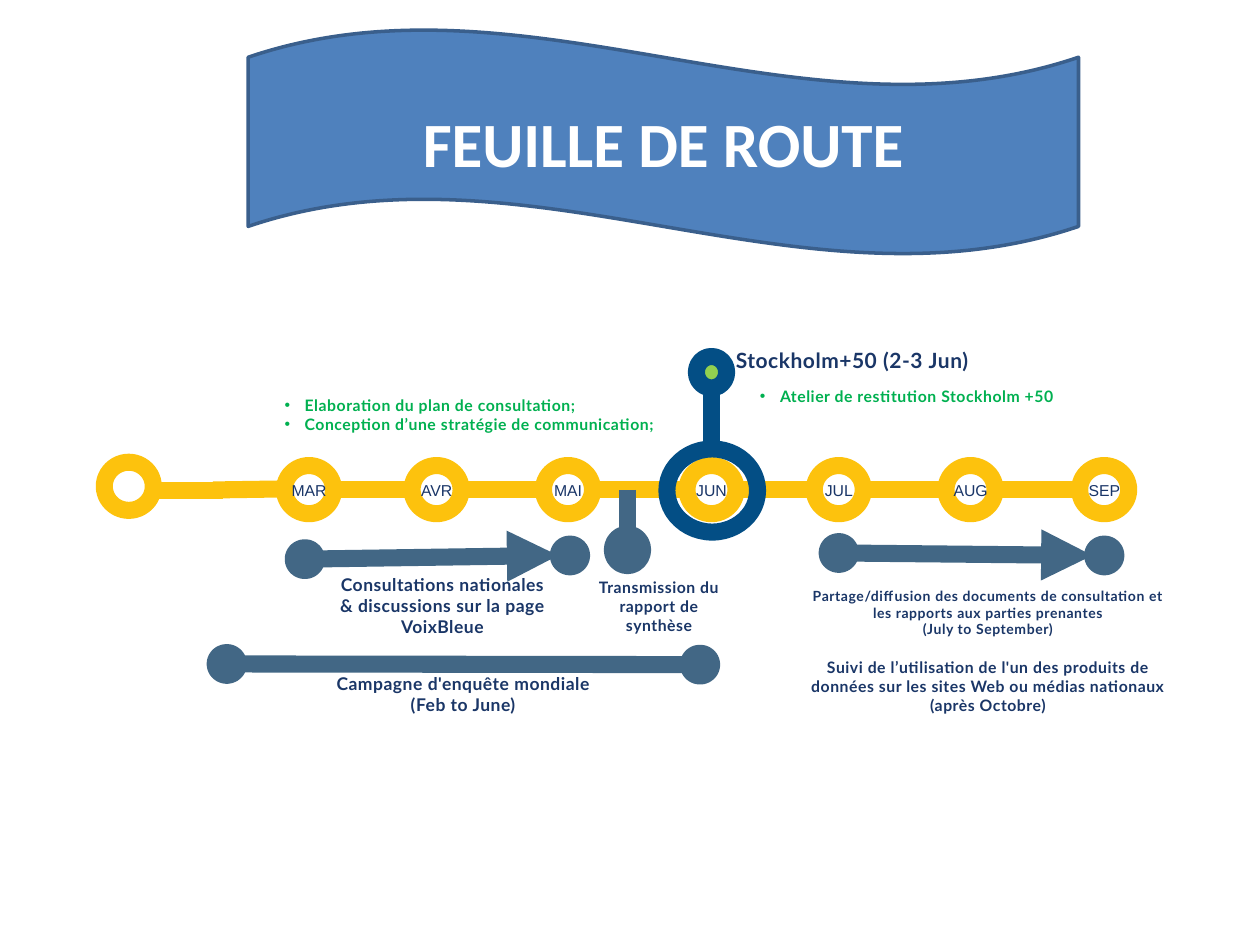
import pptx
import pptx.dml.color
import pptx.enum.shapes
import pptx.enum.text
import pptx.oxml.ns
import pptx.util
from lxml import etree

Pt = pptx.util.Pt
qn = pptx.oxml.ns.qn
SHAPES = pptx.enum.shapes.MSO_SHAPE
ALIGN = pptx.enum.text.PP_ALIGN

YELLOW, SLATE, BLUE = "FDC20D", "426785", "034E85"
NAVY, MONTH_NAVY, GREEN = "1A3667", "193567", "00B050"


def color(hex_code):
    return pptx.dml.color.RGBColor.from_string(hex_code)


class Roadmap:
    """Holds the drawing style and the current slide; lengths are in points."""

    stroke = 9.75
    heading_font = "Lato"
    month_font = "Arial"
    title_font = "Calibri"

    def __init__(self, slide):
        self.shapes = slide.shapes

    def shape(self, kind, left, top, width, height, line, fill=None, weight=stroke):
        shape = self.shapes.add_shape(kind, Pt(left), Pt(top), Pt(width), Pt(height))
        shape.shadow.inherit = False
        if fill:
            shape.fill.solid()
            shape.fill.fore_color.rgb = color(fill)
        else:
            shape.fill.background()
        shape.line.color.rgb = color(line)
        shape.line.width = Pt(weight)
        return shape

    def circle(self, x, y, width, height, line, fill=None):
        """Draws an ellipse around its centre."""
        self.shape(SHAPES.OVAL, x - width / 2, y - height / 2, width, height, line, fill)

    def line(self, x1, y1, x2, y2, line, arrow=False):
        connector = self.shapes.add_connector(
            pptx.enum.shapes.MSO_CONNECTOR.STRAIGHT, Pt(x1), Pt(y1), Pt(x2), Pt(y2))
        connector.line.color.rgb = color(line)
        connector.line.width = Pt(self.stroke)
        if arrow:
            etree.SubElement(connector.line._get_or_add_ln(), qn("a:tailEnd"), type="triangle")
        etree.SubElement(connector._element.spPr, qn("a:effectLst"))

    def style(self, paragraph, size, ink, font, bold):
        paragraph.font.size = Pt(size)
        paragraph.font.name = font
        paragraph.font.bold = bold
        paragraph.font.color.rgb = color(ink)

    def text(self, left, top, width, height, lines, ink=NAVY, font=heading_font,
             bold=True, align=ALIGN.CENTER, bullet=False):
        """Adds a text box; each line is (text, size, space before)."""
        frame = self.shapes.add_textbox(Pt(left), Pt(top), Pt(width), Pt(height)).text_frame
        frame.word_wrap = True
        frame.margin_left = frame.margin_right = Pt(3.6)
        frame.margin_top = frame.margin_bottom = Pt(2)
        for number, (words, size, gap) in enumerate(lines):
            paragraph = frame.add_paragraph() if number else frame.paragraphs[0]
            paragraph.alignment = align
            if gap:
                paragraph.space_before = Pt(gap)
            if bullet:
                properties = paragraph._p.get_or_add_pPr()
                properties.set("marL", str(Pt(11.5)))
                properties.set("indent", str(-Pt(11.5)))
                etree.SubElement(properties, qn("a:buFont"), typeface="Arial")
                etree.SubElement(properties, qn("a:buChar"), char="•")
            run = paragraph.add_run()
            run.text = words
            if font == self.heading_font:
                run._r.get_or_add_rPr().set("spc", "30")
            self.style(paragraph, size, ink, font, bold)

    def bullets(self, left, top, lines):
        self.text(left, top, 248.4, 26.6, [(words, 9, 0) for words in lines],
                  GREEN, align=ALIGN.LEFT, bullet=True)

    def month(self, x, y, name):
        self.text(x - 27, y - 7.2, 54, 14.4, [(name, 9, 0)], MONTH_NAVY,
                  self.month_font, bold=False)

    def period(self, start, end, arrow=False):
        """Draws a bar between two dots, given their centres."""
        tip = end[0] - 6.8 if arrow else end[0]
        self.line(*start, tip, end[1], SLATE, arrow)
        for x, y in (start, end):
            self.circle(x, y, 13.3, 13, SLATE, SLATE)

    def banner(self, left, top, width, height, words):
        wave = self.shape(SHAPES.WAVE, left, top, width, height, "3A5F8C", "4F81BD", 2)
        frame = wave.text_frame
        frame.vertical_anchor = pptx.enum.text.MSO_ANCHOR.MIDDLE
        title = frame.paragraphs[0]
        title.alignment = ALIGN.CENTER
        title.add_run().text = words
        self.style(title, 36, "FFFFFF", self.title_font, True)


def main():
    deck = pptx.Presentation()
    deck.slide_width, deck.slide_height = Pt(720), Pt(540)
    roadmap = Roadmap(deck.slides.add_slide(deck.slide_layouts[6]))

    axis, ring, start = 279.8, 28, 73.6
    months = {"MAR": 176.6, "AVR": 249.5, "MAI": 324.6, "JUN": 406.6,
              "JUL": 479.3, "AUG": 554.6, "SEP": 631}
    centres = list(months.values())

    roadmap.circle(start, 277.9, ring, 27.5, YELLOW)
    for x in centres:
        roadmap.circle(x, axis, ring, 27.5, YELLOW)
    roadmap.line(start + ring / 2, 280.3, 127.4, 280.3, YELLOW)
    roadmap.line(121.7, 280, centres[0] - ring / 2, 279.4, YELLOW)
    for x, following in zip(centres, centres[1:]):
        roadmap.line(x + ring / 2, axis, following - ring / 2, axis, YELLOW)
    for name, x in months.items():
        roadmap.month(x, axis, name)

    roadmap.period((129.6, 379.4), (400, 379.8))
    roadmap.period((174.2, 319.5), (325.7, 317.4), arrow=True)
    roadmap.period((479.3, 316), (631, 317.4), arrow=True)

    june = months["JUN"]
    roadmap.circle(june + 0.4, 280.3, 51.8, 47.5, BLUE)
    roadmap.circle(june, 212.7, 17.3, 18, BLUE, "92D050")
    roadmap.line(june, 221.7, june, 254.2, BLUE)
    roadmap.line(358.6, 280, 358.6, 305.3, SLATE)
    roadmap.circle(358.6, 314.2, 17.3, 18, SLATE, SLATE)

    roadmap.text(416.9, 196.6, 182, 21.6, [("Stockholm+50\u00a0(2-3 Jun)", 12, 0)],
                 align=ALIGN.LEFT)
    roadmap.bullets(159, 224, ["Elaboration du plan de consultation;",
                               "Conception d’une stratégie de communication;"])
    roadmap.bullets(430.6, 218.9, ["Atelier de restitution Stockholm +50"])

    roadmap.text(172.8, 326, 160, 42, [
        ("Consultations nationales", 10, 0),
        ("& discussions sur la page VoixBleue", 10, 0)])
    roadmap.text(334.1, 328.3, 85, 36, [("Transmission du rapport de synthèse", 9, 0)])
    roadmap.text(154.8, 382.5, 219.6, 30, [
        ("Campagne d'enquête mondiale", 10, 0), ("(Feb to June)", 10, 0)])
    roadmap.text(455.8, 333.6, 217.4, 80, [
        ("Partage/diffusion des documents de consultation et les rapports "
         "aux parties prenantes", 8, 0),
        ("(July to September)", 8, 0),
        ("Suivi de l’utilisation de l'un des produits de données sur les sites Web "
         "ou médias nationaux (après Octobre)", 9, 11.5)])

    roadmap.banner(141.8, 16.6, 474.5, 128.9, "FEUILLE DE ROUTE")
    deck.save("out.pptx")


if __name__ == "__main__":
    main()
